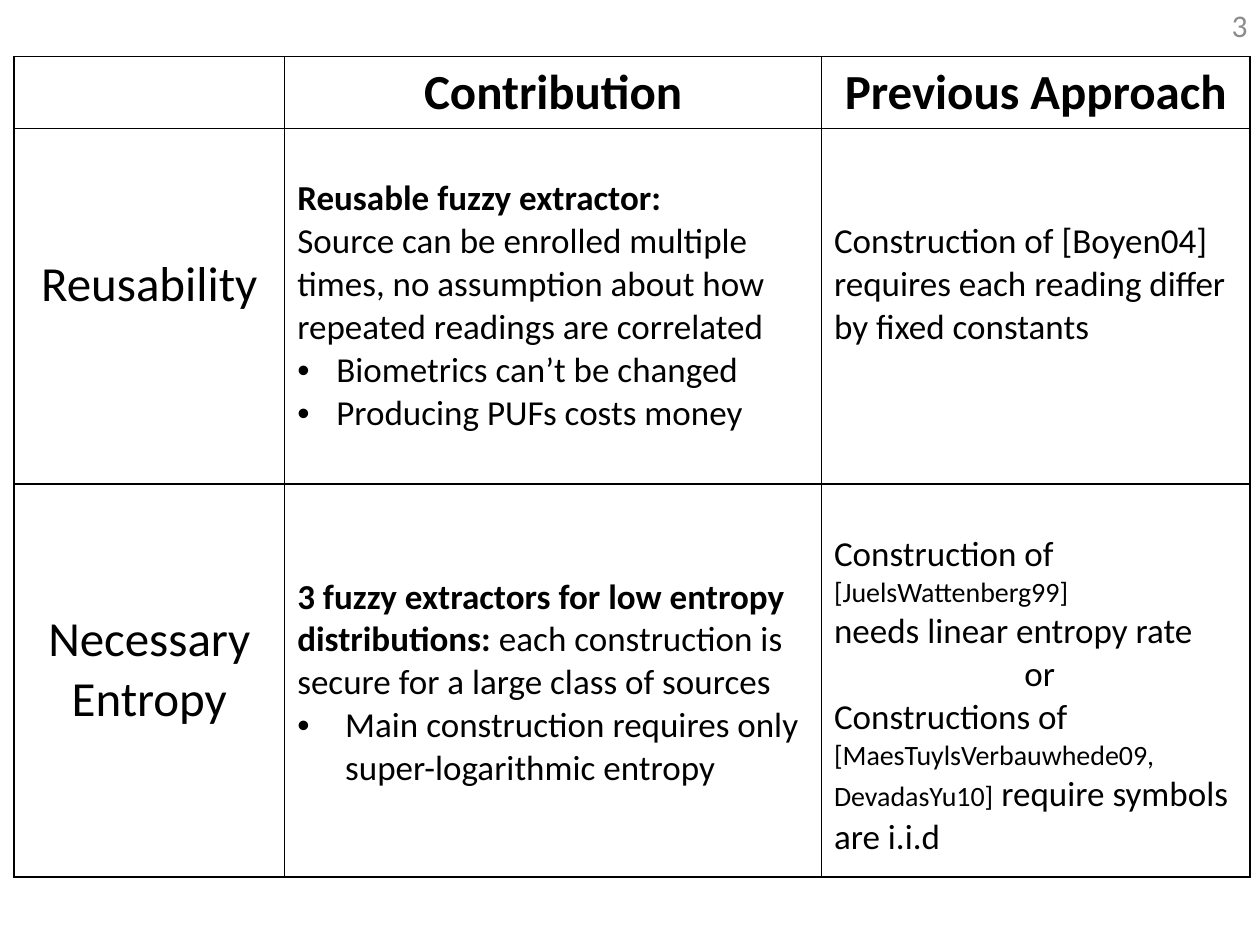
from dataclasses import dataclass

from lxml import etree
from pptx import Presentation
from pptx.dml.color import RGBColor
from pptx.enum import text
from pptx.oxml import ns
from pptx.util import Inches, Pt

LEFT, CENTER, RIGHT = text.PP_ALIGN.LEFT, text.PP_ALIGN.CENTER, text.PP_ALIGN.RIGHT


@dataclass(frozen=True)
class Theme:
    font: str = "Calibri"
    ink: str = "000000"
    muted: str = "8C8C8C"
    heading: int = 28
    body: int = 20
    number: int = 18
    citation: int = 16
    border: float = 1


@dataclass
class Para:
    """Runs are (text, size, bold); a positive indent makes a bullet."""
    runs: list
    align: int = LEFT
    indent: float = 0


@dataclass
class Cell:
    paras: list
    top: float = 0.05


T = Theme()


def body(words, bold=False):
    return (words, T.body, bold)


def cite(words):
    return (words, T.citation, False)


def heading(words, bold=False, top=0.05):
    return Cell([Para([(words, T.heading, bold)], CENTER)], top)


class SlideBuilder:
    def __init__(self, slide, theme):
        self.slide, self.theme = slide, theme

    def bullet(self, p, indent):
        pPr = p._p.get_or_add_pPr()
        pPr.set("marL", str(Inches(indent)))
        pPr.set("indent", str(-Inches(indent)))
        etree.SubElement(pPr, ns.qn("a:buFont"), typeface="Arial")
        etree.SubElement(pPr, ns.qn("a:buChar"), char="•")

    def run(self, p, words, size, bold, color):
        """Add text to a paragraph, turning each newline into a line break."""
        for i, line in enumerate(words.split("\n")):
            if i:
                p.add_line_break()
                etree.SubElement(p._p[-1], ns.qn("a:rPr"), sz=str(size * 100))
            r = p.add_run()
            r.text = line
            r.font.name = self.theme.font
            r.font.size = Pt(size)
            r.font.bold = bold
            r.font.color.rgb = RGBColor.from_string(color)

    def fill_text(self, tf, paras, color):
        tf.word_wrap = True
        for i, para in enumerate(paras):
            p = tf.add_paragraph() if i else tf.paragraphs[0]
            p.alignment = para.align
            if para.indent:
                self.bullet(p, para.indent)
            for run in para.runs:
                self.run(p, *run, color)

    def text_box(self, left, top, width, height, paras, color):
        sp = self.slide.shapes.add_textbox(*map(Inches, (left, top, width, height)))
        sp.text_frame.vertical_anchor = text.MSO_ANCHOR.MIDDLE
        self.fill_text(sp.text_frame, paras, color)

    def borders(self, cell):
        tcPr = cell._tc.get_or_add_tcPr()
        for i, side in enumerate("LRTB"):
            ln = etree.Element(ns.qn(f"a:ln{side}"), w=str(Pt(self.theme.border)))
            fill = etree.SubElement(ln, ns.qn("a:solidFill"))
            etree.SubElement(fill, ns.qn("a:srgbClr"), val=self.theme.ink)
            tcPr.insert(i, ln)

    def table(self, left, top, widths, heights, rows):
        frame = self.slide.shapes.add_table(
            len(heights), len(widths), Inches(left), Inches(top),
            Inches(sum(widths)), Inches(sum(heights)))
        table = frame.table
        table.first_row = table.horz_banding = False
        for column, width in zip(table.columns, widths):
            column.width = Inches(width)
        for row, height, contents in zip(table.rows, heights, rows):
            row.height = Inches(height)
            for cell, content in zip(row.cells, contents):
                cell.fill.background()
                cell.margin_top = Inches(content.top)
                self.borders(cell)
                self.fill_text(cell.text_frame, content.paras, self.theme.ink)


ROWS = [
    [Cell([]), heading("Contribution", True), heading("Previous Approach", True)],
    [
        heading("Reusability", top=1),
        Cell([
            Para([body("Reusable fuzzy extractor:", True)]),
            Para([body("Source can be enrolled multiple times, no assumption "
                       "about how repeated readings are correlated")]),
            Para([body("Biometrics can’t be changed")], indent=0.31),
            Para([body("Producing PUFs costs money")], indent=0.31),
        ], top=0.39),
        Cell([Para([body("Construction of [Boyen04] requires each reading "
                         "differ by fixed constants")])], top=0.73),
    ],
    [
        heading("Necessary Entropy", top=1),
        Cell([
            Para([body("3 fuzzy extractors for low entropy distributions:", True),
                  body(" each construction is secure for a large class of sources")]),
            Para([body("Main construction requires only super-logarithmic entropy")],
                 indent=0.38),
        ], top=0.73),
        Cell([
            Para([body("Construction of "), cite("[JuelsWattenberg99] \n"),
                  body("needs linear entropy rate")]),
            Para([body(" or")], CENTER),
            Para([body("Constructions of "),
                  cite("[MaesTuylsVerbauwhede09,\nDevadasYu10]"),
                  body(" require symbols are i.i.d")]),
        ], top=0.39),
    ],
]


def main():
    prs = Presentation()
    prs.slide_width, prs.slide_height = Inches(10), Inches(7.5)
    s = SlideBuilder(prs.slides.add_slide(prs.slide_layouts[6]), T)
    s.text_box(7.67, 0, 2.33, 0.4, [Para([("3", T.number, False)], RIGHT)], T.muted)
    s.table(0.11, 0.45, [2.15, 4.26, 3.4], [0.57, 2.82, 3.12], ROWS)
    prs.save("out.pptx")


if __name__ == "__main__":
    main()
